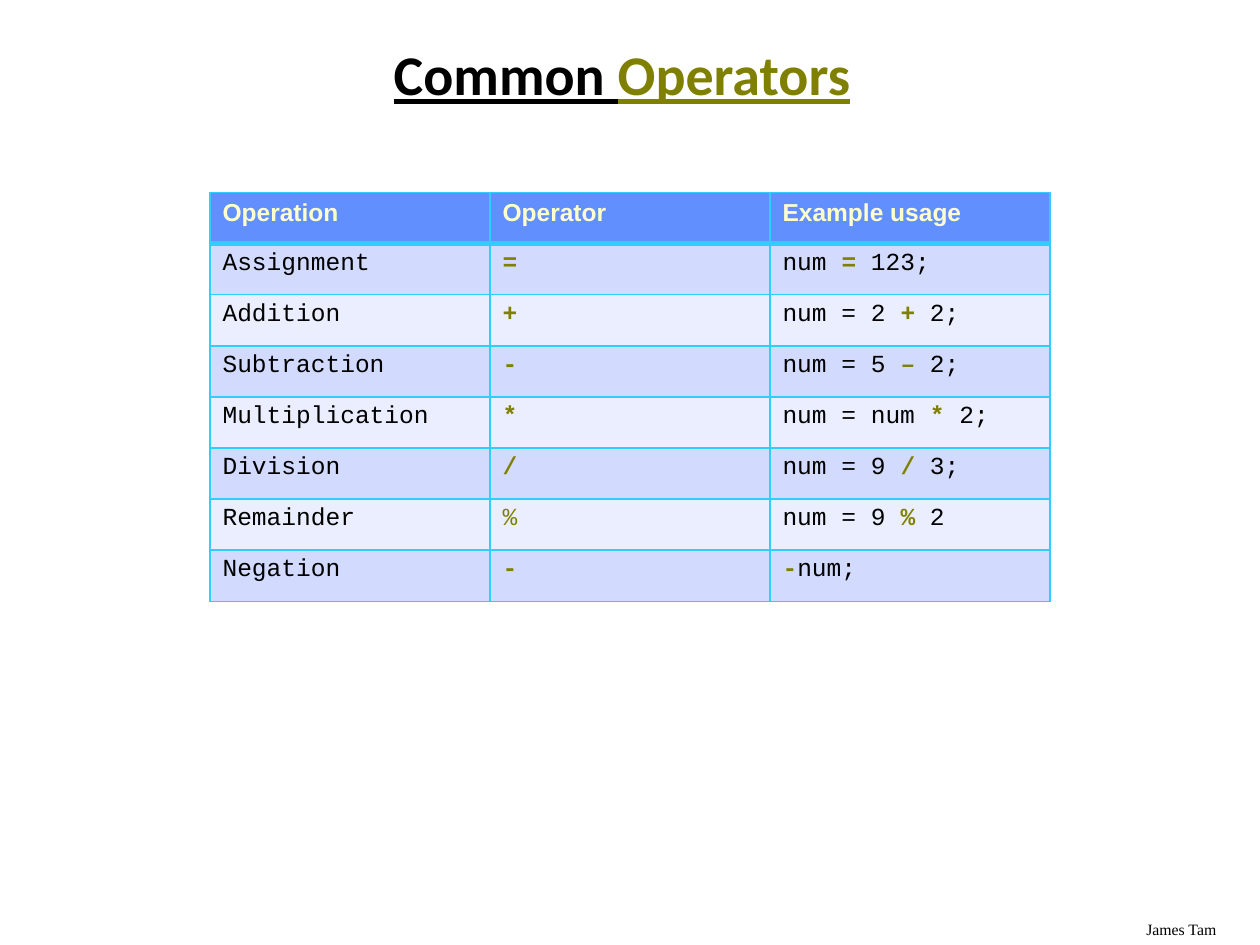
from lxml import etree
from pptx import Presentation
from pptx.dml.color import RGBColor
from pptx.enum.text import MSO_ANCHOR, PP_ALIGN
from pptx.oxml.ns import qn
from pptx.util import Pt

MIDDLE = MSO_ANCHOR.MIDDLE
TOP = MSO_ANCHOR.TOP
LEFT = PP_ALIGN.LEFT
CENTER = PP_ALIGN.CENTER

HEADS = ["Operation", "Operator", "Example usage"]
# Text between bars takes the accent colour
ROWS = [
    ["Assignment", "|=|", "num |=| 123;"],
    ["Addition", "|+|", "num = 2 |+| 2;"],
    ["Subtraction", "|-|", "num = 5 |–| 2;"],
    ["Multiplication", "|*|", "num = num |*| 2;"],
    ["Division", "|/|", "num = 9 |/| 3;"],
    ["Remainder", "|%|", "num = 9 |%| 2"],
    ["Negation", "|-|", "|-|num;"],
]


def paint(code):
    return RGBColor.from_string(code)


def write(frame, text, font="Courier New", size=14, color="000000",
          accent="808000", bold=False, strong=True, line=False,
          align=LEFT, space=1.0):
    para = frame.paragraphs[0]
    para.alignment = align
    para.line_spacing = space
    for i, part in enumerate(text.split("|")):
        if not part:
            continue
        mark = i % 2 == 1
        run = para.add_run()
        run.text = part
        run.font.name = font
        run.font.size = Pt(size)
        run.font.bold = strong if mark else bold
        run.font.underline = line
        run.font.color.rgb = paint(accent if mark else color)


class Deck:
    edge = "33CCFF"
    head = "618FFD"
    bands = ["D2DBFE", "EAEEFF"]

    def __init__(self, wide, high):
        self.show = Presentation()
        self.show.slide_width = Pt(wide)
        self.show.slide_height = Pt(high)
        self.slide = self.show.slides.add_slide(self.show.slide_layouts[6])

    def text(self, x, y, w, h, text, anchor=TOP, **style):
        box = self.slide.shapes.add_textbox(Pt(x), Pt(y), Pt(w), Pt(h))
        frame = box.text_frame
        frame.word_wrap = True
        frame.vertical_anchor = anchor
        write(frame, text, **style)

    def border(self, cell, top, base):
        props = cell._tc.get_or_add_tcPr()
        for side, width in zip("LRTB", (1, 1, top, base)):
            line = etree.SubElement(props, qn(f"a:ln{side}"), w=str(Pt(width)))
            fill = etree.SubElement(line, qn("a:solidFill"))
            etree.SubElement(fill, qn("a:srgbClr"), val=self.edge)

    def table(self, x, y, wide, high, heads, rows):
        cols, count = len(heads), len(rows) + 1
        grid = self.slide.shapes.add_table(
            count, cols, Pt(x), Pt(y), Pt(wide * cols), Pt(high * count)).table
        for col in grid.columns:
            col.width = Pt(wide)
        for r, row in enumerate([heads] + rows):
            grid.rows[r].height = Pt(high)
            for c, text in enumerate(row):
                cell = grid.cell(r, c)
                # The rule below the header is thick
                self.border(cell, 3 if r == 1 else 1, 3 if r == 0 else 1)
                cell.fill.solid()
                tint = self.bands[(r - 1) % 2] if r else self.head
                cell.fill.fore_color.rgb = paint(tint)
                if r == 0:
                    write(cell.text_frame, text, font="Arial",
                          color="FFFFCC", bold=True)
                else:
                    write(cell.text_frame, text, strong=text != "|%|")


def main():
    deck = Deck(720, 540)
    # Author
    deck.text(648, 522, 72, 18, "James Tam", font="Times New Roman", size=9)
    # Title
    deck.text(34, 24, 643, 41, "Common |Operators|", anchor=MIDDLE,
              font="Calibri", size=32, bold=True, line=True,
              align=CENTER, space=0.9)
    # Operators
    deck.table(120, 110, 160, 29.2, HEADS, ROWS)
    deck.show.save("out.pptx")


if __name__ == "__main__":
    main()
